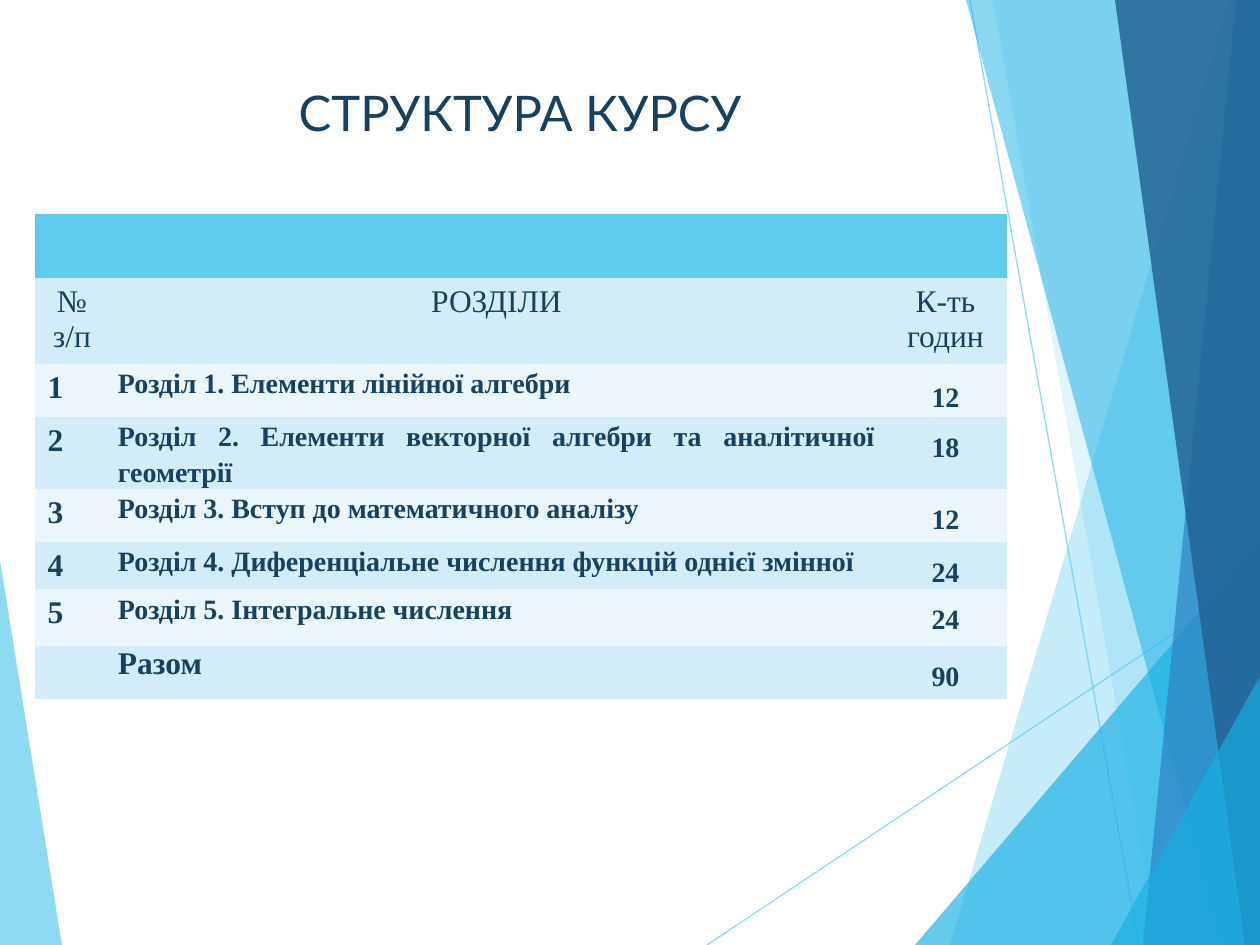
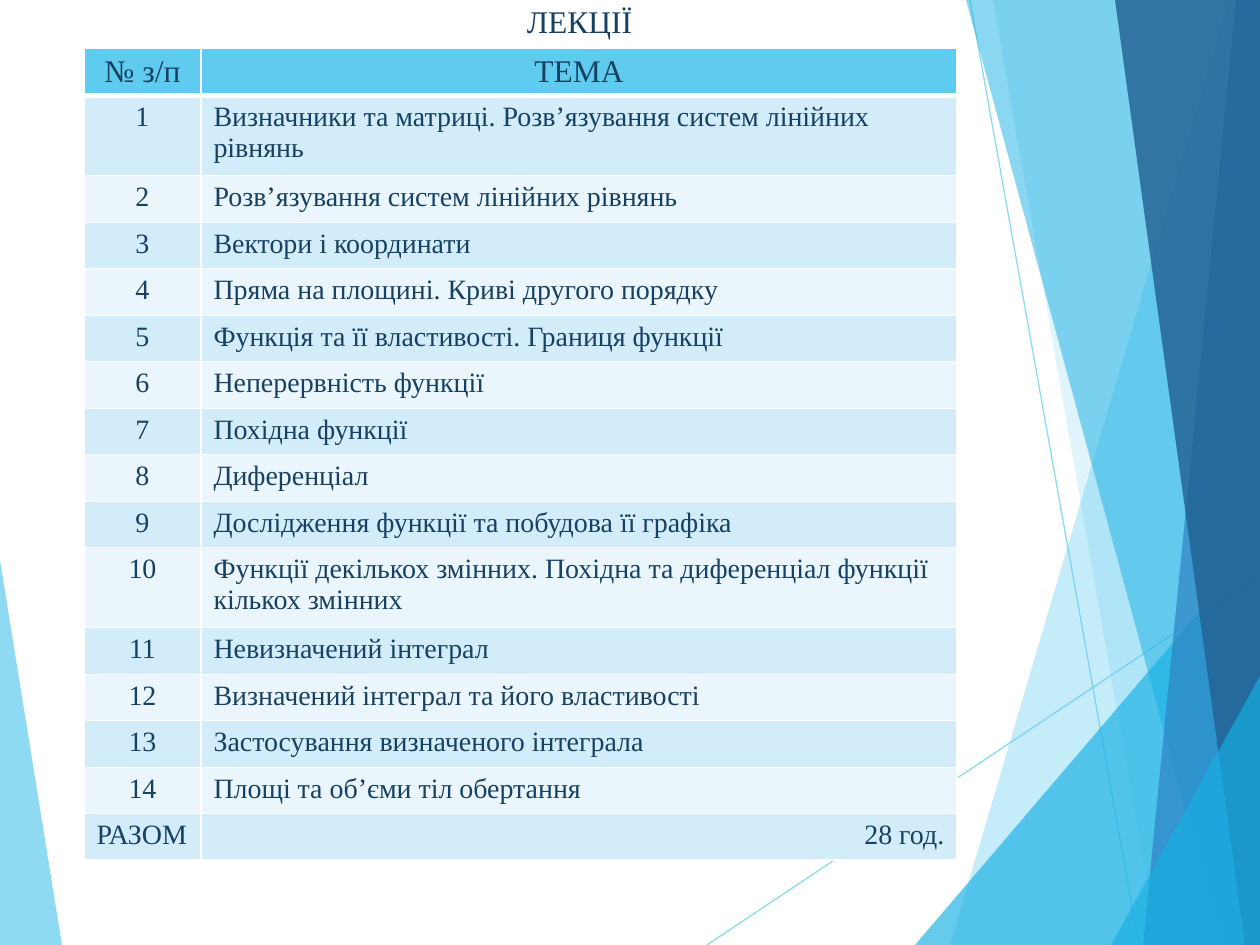
from dataclasses import dataclass

from lxml.etree import SubElement
from pptx import Presentation
from pptx.dml.color import RGBColor
from pptx.enum.shapes import MSO_CONNECTOR
from pptx.enum.text import MSO_ANCHOR, PP_ALIGN
from pptx.oxml.ns import qn
from pptx.util import Emu, Pt

W, H = 1260, 945
NO_STYLE = "{2D5ABB26-0587-4C30-8999-92F81FD0307C}"
LEFT, CENTER, RIGHT, JUSTIFY = (
    PP_ALIGN.LEFT, PP_ALIGN.CENTER, PP_ALIGN.RIGHT, PP_ALIGN.JUSTIFY)


@dataclass(frozen=True)
class Theme:
    text: str = "174162"
    sky: str = "5FCBEF"
    cyan: str = "17B0E4"
    blue: str = "2E83C3"
    navy: str = "226292"
    white: str = "FFFFFF"
    stripes: tuple = ("D2ECF9", "EAF6FC")
    serif: str = "Times New Roman"
    sans: str = "Lato"
    title: int = 28
    head: int = 18
    body: int = 16


T = Theme()


def px(n):
    return Emu(round(n * 914400 / 126))


class Deck:
    def __init__(self, theme):
        self.t = theme
        self.prs = Presentation()
        self.prs.slide_width, self.prs.slide_height = px(W), px(H)
        self.s = None

    def slide(self):
        self.s = self.prs.slides.add_slide(self.prs.slide_layouts[6])
        self.backdrop()

    def backdrop(self):
        """Translucent facets along the left and right edges."""
        t = self.t
        self.facet([(0, 560), (62, H), (0, H)], t.sky, 70)
        self.line((707, H), (W, 576), t.sky, 70)
        self.line((970, 0), (1139, H), t.sky, 70)
        self.band(1229, 950, t.sky, 36)
        self.band(993, 1158, t.sky, 20)
        self.facet([(915, H), (W, 541), (W, H)], t.cyan, 66)
        self.band(966, 1222, t.cyan, 50)
        self.band(1236, 1143, t.blue, 70)
        self.band(1115, 1245, t.navy, 82)
        self.facet([(1111, H), (W, 676), (W, H)], t.cyan, 66)

    def band(self, top_x, bottom_x, color, alpha):
        """A facet from a slanted edge to the right side of the slide."""
        self.facet([(top_x, 0), (bottom_x, H), (W, H), (W, 0)], color, alpha)

    def facet(self, points, color, alpha):
        start, *rest = [(px(x), px(y)) for x, y in points]
        builder = self.s.shapes.build_freeform(*start)
        builder.add_line_segments(rest, close=True)
        shape = builder.convert_to_shape()
        shape.shadow.inherit = False
        shape.fill.solid()
        shape.fill.fore_color.rgb = RGBColor.from_string(color)
        shape.line.fill.background()
        self.set_alpha(shape, alpha)

    def line(self, start, end, color, alpha):
        ln = self.s.shapes.add_connector(
            MSO_CONNECTOR.STRAIGHT, *map(px, start + end))
        ln.line.color.rgb = RGBColor.from_string(color)
        ln.line.width = Pt(0.75)
        self.set_alpha(ln, alpha)
        SubElement(ln._element.spPr, qn("a:effectLst"))

    def set_alpha(self, shape, percent):
        clr = next(shape._element.spPr.iter(qn("a:srgbClr")))
        SubElement(clr, qn("a:alpha"), val=str(percent * 1000))

    def put_text(self, tf, text, size, align, font=None, bold=False,
                 spacing=None, after=None):
        p = tf.paragraphs[0]
        p.alignment = align
        p.line_spacing = spacing
        if after:
            p.space_after = Pt(after)
        p.font.name = font or self.t.serif
        p.font.size = Pt(size)
        p.font.bold = bold
        p.font.color.rgb = RGBColor.from_string(self.t.text)
        p.add_run().text = text

    def heading(self, text, x, y, w, h, size, font):
        tf = self.s.shapes.add_textbox(*map(px, (x, y, w, h))).text_frame
        tf.word_wrap = True
        self.put_text(tf, text, size, CENTER, font)

    def table(self, x, y, widths, heights):
        """A table with a sky-blue top row and striped rows below it."""
        frame = self.s.shapes.add_table(
            len(heights), len(widths),
            *map(px, (x, y, sum(widths), sum(heights))))
        tbl = frame.table
        tbl.first_row = tbl.horz_banding = False
        next(frame._element.iter(qn("a:tableStyleId"))).text = NO_STYLE
        for col, w in zip(tbl.columns, widths):
            col.width = px(w)
        for i, (row, h) in enumerate(zip(tbl.rows, heights)):
            row.height = px(h)
            color = self.t.stripes[(i - 1) % 2] if i else self.t.sky
            for cell in row.cells:
                cell.fill.solid()
                cell.fill.fore_color.rgb = RGBColor.from_string(color)
        return tbl

    def cell(self, cell, text, size, align, tight=False, **style):
        if tight:
            cell.margin_left = cell.margin_right = px(9)
            cell.margin_top = cell.margin_bottom = 0
        self.put_text(cell.text_frame, text, size, align, **style)

    def borders(self, tbl):
        """White grid, heavier around the line under the header."""
        for i, row in enumerate(tbl.rows):
            widths = {"L": 1, "R": 1, "T": 3 if i == 1 else 1,
                      "B": 1 if i else 3}
            for cell in row.cells:
                tc_pr = cell._tc.get_or_add_tcPr()
                for n, (side, pt) in enumerate(widths.items()):
                    ln = tc_pr.makeelement(qn("a:ln" + side), w=str(int(Pt(pt))))
                    fill = SubElement(ln, qn("a:solidFill"))
                    SubElement(fill, qn("a:srgbClr"), val=self.t.white)
                    tc_pr.insert(n, ln)


def course_structure(d):
    d.slide()
    tbl = d.table(35, 214, [74, 775, 123], [64, 86, 53, 72, 53, 47, 57, 53])
    tbl.cell(0, 0).merge(tbl.cell(0, 2))

    # Column titles
    for c, text in enumerate(["№ з/п", "РОЗДІЛИ", "К-ть годин"]):
        d.cell(tbl.cell(1, c), text, T.head, CENTER)

    # Chapters and hours
    chapters = [
        ("Елементи лінійної алгебри", 12),
        ("Елементи векторної алгебри та аналітичної геометрії", 18),
        ("Вступ до математичного аналізу", 12),
        ("Диференціальне числення функцій однієї змінної", 24),
        ("Інтегральне числення", 24),
    ]
    for n, (name, hours) in enumerate(chapters, 1):
        d.cell(tbl.cell(n + 1, 0), str(n), T.head, LEFT, bold=True)
        d.cell(tbl.cell(n + 1, 1), f"Розділ {n}. {name}", T.body, JUSTIFY,
               tight=True, bold=True, spacing=1.15, after=10)
        d.cell(tbl.cell(n + 1, 2), str(hours), T.body, CENTER,
               tight=True, bold=True, spacing=1.5, after=10 if n == 1 else None)
    tbl.cell(2, 2).vertical_anchor = MSO_ANCHOR.MIDDLE

    # Total
    total = sum(hours for _, hours in chapters)
    d.cell(tbl.cell(7, 1), "Разом", T.head, LEFT, tight=True, bold=True)
    d.cell(tbl.cell(7, 2), str(total), T.body, CENTER,
           tight=True, bold=True, spacing=1.5)

    d.heading("СТРУКТУРА КУРСУ", 205, 76, 630, 72, T.title, T.sans)


def lectures(d):
    d.slide()
    topics = [
        "Визначники та матриці. Розв’язування систем лінійних рівнянь",
        "Розв’язування систем лінійних рівнянь",
        "Вектори і координати",
        "Пряма на площині. Криві другого порядку",
        "Функція та її властивості. Границя функції",
        "Неперервність функції",
        "Похідна функції",
        "Диференціал",
        "Дослідження функції та побудова її графіка",
        "Функції декількох змінних. Похідна та диференціал функції "
        "кількох змінних",
        "Невизначений інтеграл",
        "Визначений інтеграл та його властивості",
        "Застосування визначеного інтеграла",
        "Площі та об’єми тіл обертання",
    ]
    heights = [47, 80] + [47, 46] * 4 + [80] + [47, 46] * 2 + [47]
    tbl = d.table(84, 48, [117, 756], heights)
    d.borders(tbl)

    # Header, topics, total
    d.cell(tbl.cell(0, 0), "№ з/п", T.head, CENTER)
    d.cell(tbl.cell(0, 1), "ТЕМА", T.head, CENTER)
    for n, topic in enumerate(topics, 1):
        d.cell(tbl.cell(n, 0), str(n), T.body, CENTER)
        d.cell(tbl.cell(n, 1), topic, T.body, LEFT)
    d.cell(tbl.cell(15, 0), "РАЗОМ", T.body, LEFT)
    d.cell(tbl.cell(15, 1), "28 год.", T.body, RIGHT)

    d.heading("ЛЕКЦІЇ", 263, -4, 633, 50, T.head, T.serif)


def main():
    d = Deck(T)
    course_structure(d)
    lectures(d)
    d.prs.save("out.pptx")


if __name__ == "__main__":
    main()
